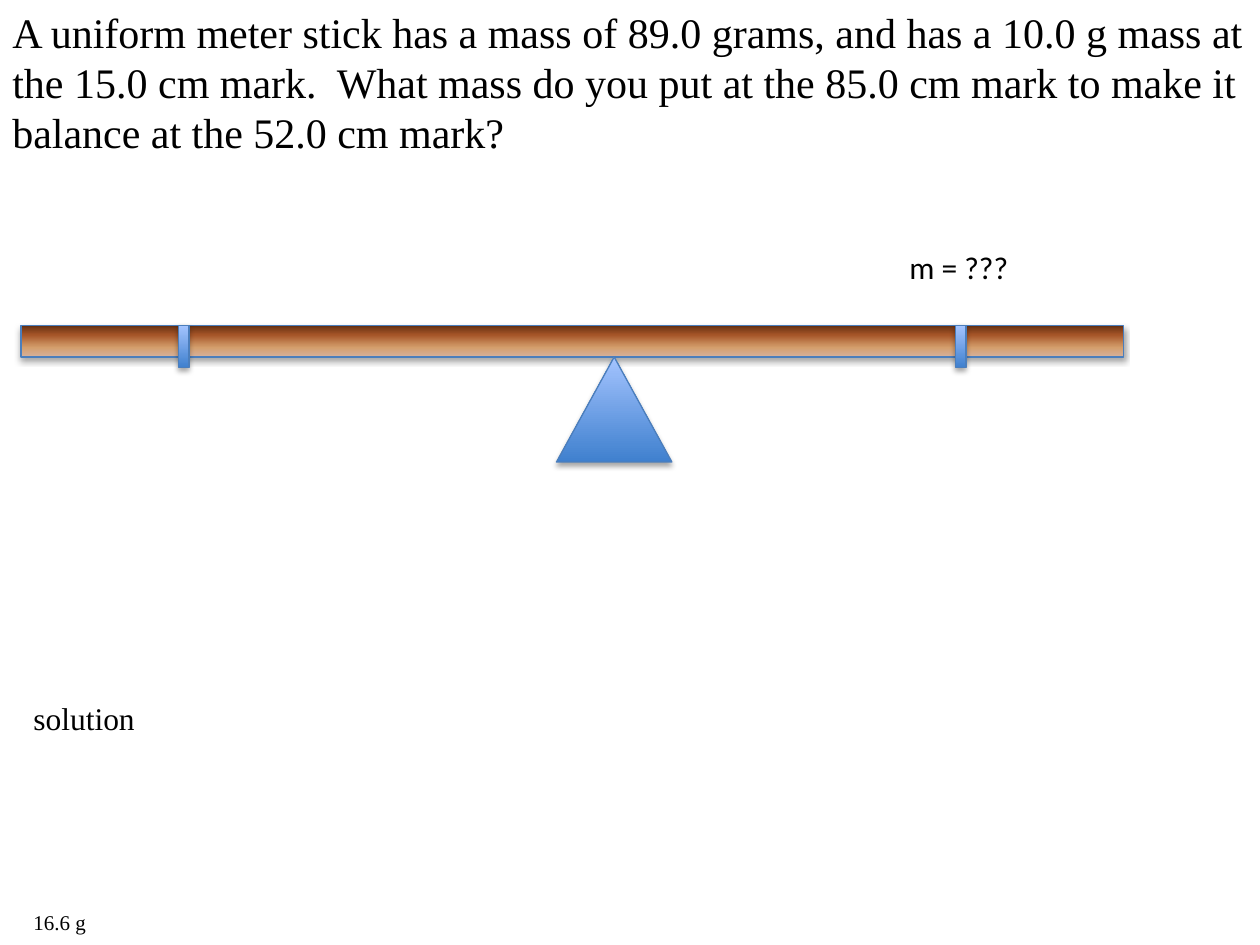
from dataclasses import dataclass

from lxml.etree import SubElement
from pptx import Presentation
from pptx.dml.color import RGBColor
from pptx.enum.shapes import MSO_SHAPE as Preset
from pptx.enum.text import MSO_AUTO_SIZE as AutoSize
from pptx.oxml.ns import qn
from pptx.slide import Slide
from pptx.util import Pt

BLACK = RGBColor(0x00, 0x00, 0x00)
OUTLINE = RGBColor(0x4B, 0x7E, 0xBC)
BLUE_GRADIENT = (
    (0, RGBColor(0x3F, 0x80, 0xCE)),
    (100, RGBColor(0xA4, 0xC4, 0xFF)),
)
WOOD_GRADIENT = (
    (0, RGBColor(0xD6, 0xB1, 0x9C)),
    (30, RGBColor(0xD4, 0x9E, 0x6C)),
    (70, RGBColor(0xA6, 0x55, 0x28)),
    (100, RGBColor(0x66, 0x30, 0x12)),
)
SERIF = "Times New Roman"
STICK_TOP = 186
STICK_HEIGHT = 18


@dataclass
class Label:
    text: str
    left: float
    top: float
    width: float
    height: float
    size: float
    font: str = SERIF
    wrap: bool = True


@dataclass
class Part:
    preset: Preset
    left: float
    top: float
    width: float
    height: float
    gradient: tuple = BLUE_GRADIENT


LABELS = [
    Label(
        "A uniform meter stick has a mass of 89.0 grams, and has a 10.0 g mass "
        "at the 15.0 cm mark.  What mass do you put at the 85.0 cm mark to make "
        "it balance at the 52.0 cm mark?",
        0, 0, 720, 94.5, 24,
    ),
    Label("solution", 12, 396, 684, 29, 18),
    Label("16.6 g", 12, 516, 44.6, 21.8, 12, wrap=False),
    Label("m = ???", 512.6, 138, 72, 29, 18, "Calibri", wrap=False),
]

PARTS = [
    Part(Preset.RECTANGLE, 12, STICK_TOP, 630, STICK_HEIGHT, WOOD_GRADIENT),
    Part(Preset.RECTANGLE, 102, STICK_TOP, 6, 24),
    Part(Preset.RECTANGLE, 546, STICK_TOP, 6, 24),
    Part(Preset.ISOSCELES_TRIANGLE, 318, STICK_TOP + STICK_HEIGHT, 66, 60),
]


def add_label(slide: Slide, label: Label) -> None:
    box = slide.shapes.add_textbox(
        Pt(label.left), Pt(label.top), Pt(label.width), Pt(label.height)
    )
    text_frame = box.text_frame
    text_frame.text = label.text
    text_frame.word_wrap = label.wrap
    text_frame.auto_size = AutoSize.SHAPE_TO_FIT_TEXT
    font = text_frame.paragraphs[0].runs[0].font
    font.name = label.font
    font.size = Pt(label.size)
    font.color.rgb = BLACK


def set_gradient(shape, gradient: tuple) -> None:
    shape.fill.gradient()
    shape.fill.gradient_angle = 90
    stops = shape._element.spPr.find(qn("a:gradFill")).find(qn("a:gsLst"))
    for stop in list(stops):
        stops.remove(stop)
    for position, color in gradient:
        stop = SubElement(stops, qn("a:gs"), pos=str(position * 1000))
        SubElement(stop, qn("a:srgbClr"), val=str(color))


def set_shadow(shape) -> None:
    shape.shadow.inherit = False
    effects = shape._element.spPr.find(qn("a:effectLst"))
    shadow = SubElement(
        effects, qn("a:outerShdw"), blurRad=str(Pt(3.1)), dist=str(Pt(1.8)),
        dir="5400000", rotWithShape="0",
    )
    color = SubElement(shadow, qn("a:srgbClr"), val=str(BLACK))
    SubElement(color, qn("a:alpha"), val="35000")


def add_part(slide: Slide, part: Part) -> None:
    shape = slide.shapes.add_shape(
        part.preset, Pt(part.left), Pt(part.top), Pt(part.width), Pt(part.height)
    )
    set_gradient(shape, part.gradient)
    shape.line.color.rgb = OUTLINE
    shape.line.width = Pt(0.75)
    set_shadow(shape)


def main() -> None:
    presentation = Presentation()
    presentation.slide_width = Pt(720)
    presentation.slide_height = Pt(540)
    slide = presentation.slides.add_slide(presentation.slide_layouts[6])
    for label in LABELS[:3]:
        add_label(slide, label)
    for part in PARTS:
        add_part(slide, part)
    add_label(slide, LABELS[3])
    presentation.save("out.pptx")


if __name__ == "__main__":
    main()
